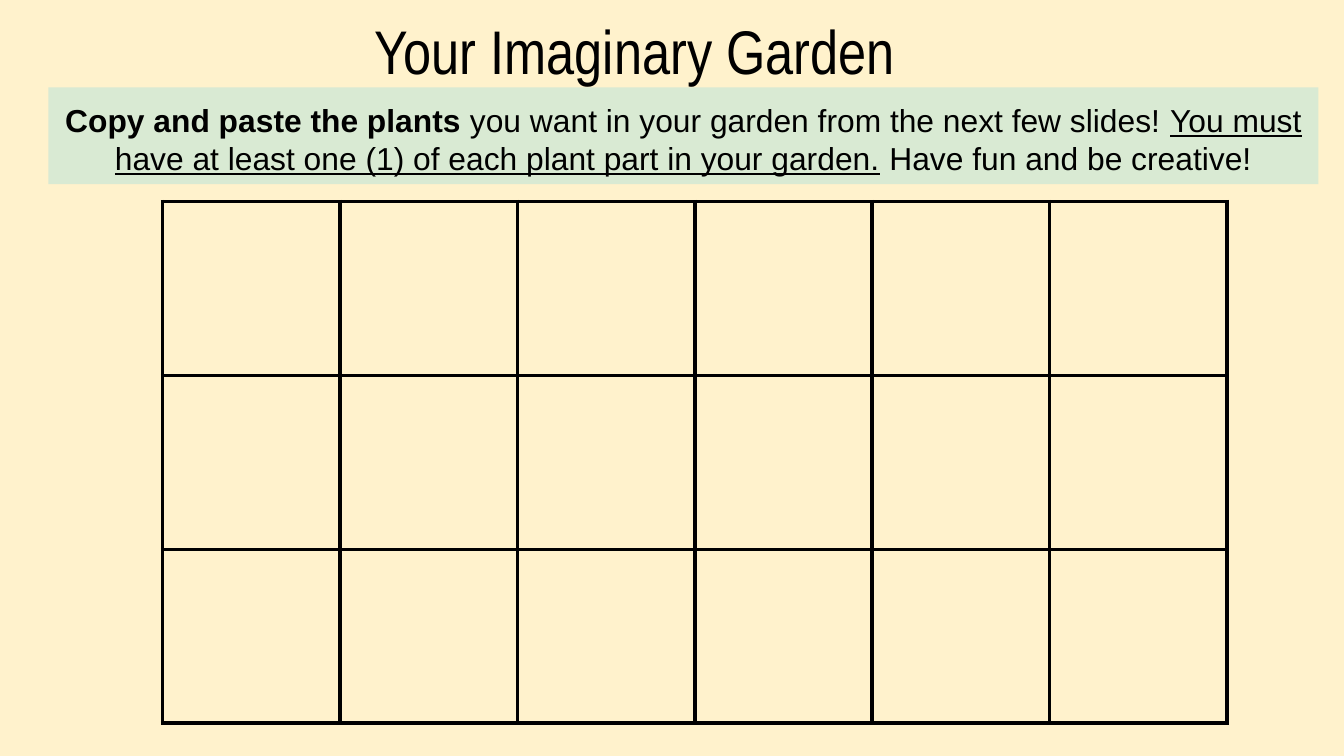
"""Build the imaginary garden slide with its empty planting grid."""
from dataclasses import dataclass

from lxml import etree
from pptx import Presentation
from pptx.dml.color import RGBColor
from pptx.enum.shapes import MSO_SHAPE
from pptx.enum.text import MSO_ANCHOR, PP_ALIGN
from pptx.oxml.ns import qn
from pptx.util import Inches, Pt

RECTANGLE = MSO_SHAPE.RECTANGLE
TOP = MSO_ANCHOR.TOP
LEFT, CENTER = PP_ALIGN.LEFT, PP_ALIGN.CENTER


@dataclass(frozen=True)
class Theme:
    paper: str = "FFF2CC"
    banner: str = "D9EAD3"
    ink: str = "000000"
    title_font: str = "Arial Narrow"
    body_font: str = "Arial"
    title_size: float = 33
    body_size: float = 17
    border: float = 2.25


theme = Theme()
WIDTH = Inches(10)
HEIGHT = WIDTH * 9 // 16
ROWS, COLUMNS = 3, 6
CELL_WIDTH, CELL_HEIGHT = Inches(1.32), int(HEIGHT * 0.23)


def write(box, runs, font, size, alignment):
    frame = box.text_frame
    frame.word_wrap = True
    frame.vertical_anchor = TOP
    frame.margin_left = frame.margin_right = Inches(0.1)
    frame.margin_top = frame.margin_bottom = Inches(0.1)
    para = frame.paragraphs[0]
    para.alignment = alignment
    for text, bold, underline in runs:
        span = para.add_run()
        span.text = text
        span.font.name = font
        span.font.size = Pt(size)
        span.font.bold = bold
        span.font.underline = underline
        span.font.color.rgb = RGBColor.from_string(theme.ink)


deck = Presentation()
deck.slide_width, deck.slide_height = WIDTH, HEIGHT
page = deck.slides.add_slide(deck.slide_layouts[6])
page.background.fill.solid()
page.background.fill.fore_color.rgb = RGBColor.from_string(theme.paper)

garden = page.shapes.add_table(
    ROWS, COLUMNS, Inches(1.21), Inches(1.5), COLUMNS * CELL_WIDTH, ROWS * CELL_HEIGHT
).table
garden.first_row = garden.horz_banding = False
for column in garden.columns:
    column.width = CELL_WIDTH
for row in garden.rows:
    row.height = CELL_HEIGHT
for cell in garden.iter_cells():
    properties = cell._tc.get_or_add_tcPr()
    for side in ("a:lnL", "a:lnR", "a:lnT", "a:lnB"):
        line = etree.SubElement(properties, qn(side), w=str(Pt(theme.border)))
        fill = etree.SubElement(line, qn("a:solidFill"))
        etree.SubElement(fill, qn("a:srgbClr"), val=theme.ink)
    cell.fill.background()

title = page.shapes.add_textbox(Inches(2.69), 0, Inches(5.24), Inches(0.73))
write(title, [("Your Imaginary Garden", False, False)],
      theme.title_font, theme.title_size, LEFT)

banner = page.shapes.add_shape(
    RECTANGLE, Inches(0.36), Inches(0.65), Inches(9.45), Inches(0.72)
)
banner.shadow.inherit = False
banner.fill.solid()
banner.fill.fore_color.rgb = RGBColor.from_string(theme.banner)
banner.line.fill.background()
instructions = [
    ("Copy and paste the plants", True, False),
    (" you want in your garden from the next few slides! ", False, False),
    ("You must have at least one (1) of each plant part in your garden.", False, True),
    (" Have fun and be creative!", False, False),
]
write(banner, instructions, theme.body_font, theme.body_size, CENTER)

deck.save("out.pptx")
